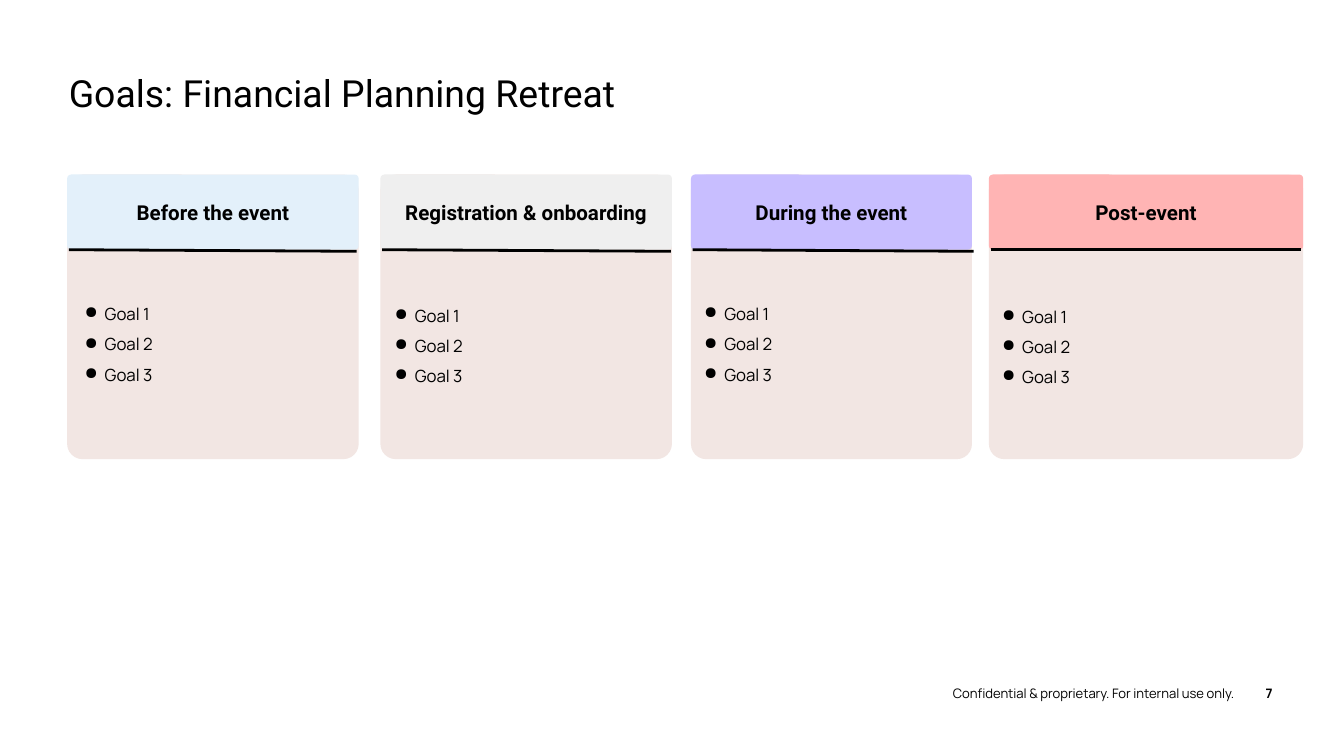
from lxml.etree import SubElement
from pptx import Presentation
from pptx.dml.color import RGBColor
from pptx.enum.shapes import MSO_CONNECTOR, MSO_SHAPE
from pptx.enum.text import MSO_ANCHOR, MSO_AUTO_SIZE, PP_ALIGN
from pptx.oxml.ns import qn
from pptx.util import Cm, Pt

BLACK = "000000"
CARD_FILL = "F2E6E3"
CARD_TOP, CARD_HEIGHT, HEADER_HEIGHT = 3.3, 5.38, 1.42
RULE_TOP = CARD_TOP + HEADER_HEIGHT
BULLET_INDENT = Cm(0.38)
GOALS = ["Goal 1", "Goal 2", "Goal 3"]

# heading, header colour, left, width, rule width, rule drop, goals shift (right, down)
CARDS = [
    ("Before the event", "E3F0FA", 1.27, 5.51, 5.44, 0.03, (0.08, 0)),
    ("Registration & onboarding", "EFEFEF", 7.19, 5.51, 5.46, 0.03, (0.02, 0.03)),
    ("During the event", "C8BEFF", 13.06, 5.31, 5.31, 0.03, (0, 0)),
    ("Post-event", "FFB4B4", 18.69, 5.94, 5.87, 0, (0, 0.05)),
]


def color(value):
    return RGBColor.from_string(value)


def set_all(target, values):
    for name, value in values.items():
        setattr(target, name, value)


def format_frame(frame, margin=0, **values):
    sides = ("margin_left", "margin_top", "margin_right", "margin_bottom")
    set_all(frame, {side: Cm(margin) for side in sides})
    set_all(frame, {"word_wrap": True, "auto_size": MSO_AUTO_SIZE.NONE, **values})


def write(para, text, font, size, bold=False, align=PP_ALIGN.LEFT):
    para.alignment = align
    span = para.add_run()
    span.text = text
    set_all(span.font, {"name": font, "size": Pt(size), "bold": bold})
    span.font.color.rgb = color(BLACK)


def add_bullet(para):
    properties = para._p.get_or_add_pPr()
    properties.set("marL", str(BULLET_INDENT))
    properties.set("indent", str(-BULLET_INDENT))
    SubElement(properties, qn("a:buChar"), char="●")


def add_panel(page, left, width, height, fill):
    panel = page.shapes.add_shape(
        MSO_SHAPE.ROUNDED_RECTANGLE, Cm(left), Cm(CARD_TOP), Cm(width), Cm(height))
    panel.adjustments[0] = 0.054
    panel.shadow.inherit = False
    panel.fill.solid()
    panel.fill.fore_color.rgb = color(fill)
    panel.line.fill.background()
    return panel


def add_rule(page, left, width, drop):
    rule = page.shapes.add_connector(
        MSO_CONNECTOR.STRAIGHT, Cm(left), Cm(RULE_TOP),
        Cm(left + width), Cm(RULE_TOP + drop))
    rule.line.color.rgb = color(BLACK)
    rule.line.width = Pt(1.5)
    SubElement(rule._element.spPr, qn("a:effectLst"))


def add_goals(page, left, top, width):
    box = page.shapes.add_textbox(Cm(left), Cm(top), Cm(width), Cm(2.44))
    frame = box.text_frame
    format_frame(frame, 0.25, margin_top=Cm(0.83))
    for number, goal in enumerate(GOALS):
        para = frame.add_paragraph() if number else frame.paragraphs[0]
        para.line_spacing = 1.5
        write(para, goal, "Manrope", 9)
        add_bullet(para)


def add_card(page, heading, fill, left, width, rule_width, rule_drop, shift):
    add_panel(page, left, width, CARD_HEIGHT, CARD_FILL)
    header = add_panel(page, left, width, HEADER_HEIGHT, fill)
    format_frame(header.text_frame, 0.25, vertical_anchor=MSO_ANCHOR.MIDDLE)
    write(header.text_frame.paragraphs[0], heading, "Roboto", 11, True, PP_ALIGN.CENTER)
    add_rule(page, left + 0.03, rule_width, rule_drop)
    right, down = shift
    add_goals(page, left + right, RULE_TOP + down, width)


def add_title(page, text):
    title = page.shapes.title
    set_all(title, {"left": Cm(1.3), "top": Cm(1.32), "width": Cm(16.64), "height": Cm(1.12)})
    format_frame(title.text_frame, vertical_anchor=MSO_ANCHOR.TOP)
    write(title.text_frame.paragraphs[0], text, "Roboto", 20)


def add_footer(page, text, left, width, **style):
    box = page.shapes.add_textbox(Cm(left), Cm(12.95), Cm(width), Cm(0.3))
    format_frame(box.text_frame, word_wrap=False)
    write(box.text_frame.paragraphs[0], text, "Manrope", 7, **style)


def main():
    deck = Presentation()
    set_all(deck, {"slide_width": Cm(25.4), "slide_height": Cm(14.29)})
    page = deck.slides.add_slide(deck.slide_layouts[5])

    # Title
    add_title(page, "Goals: Financial Planning Retreat")

    # One card for each phase
    for card in CARDS:
        add_card(page, *card)

    # Footer and page number
    add_footer(page, "Confidential & proprietary. For internal use only.", 18.01, 5.46)
    add_footer(page, "7", 23.67, 0.38, bold=True, align=PP_ALIGN.RIGHT)

    deck.save("out.pptx")


if __name__ == "__main__":
    main()
